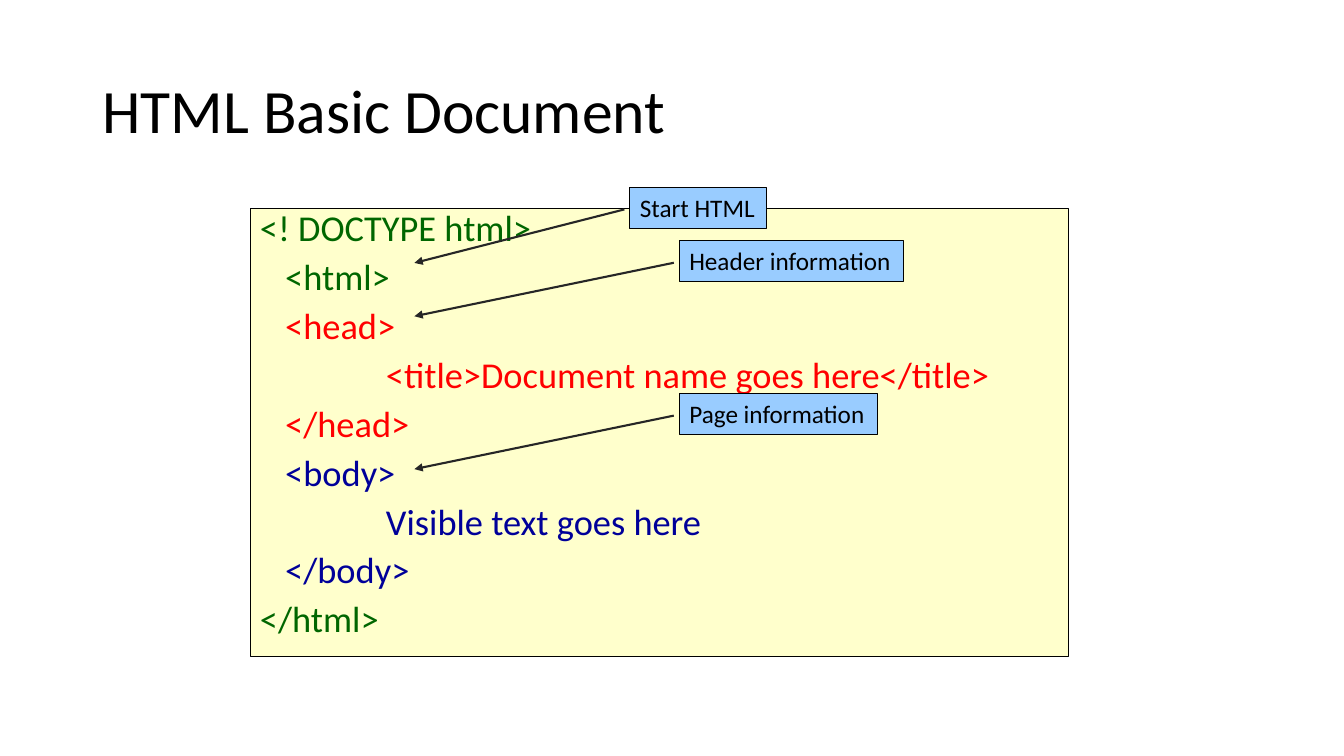
"""Builds the slide that explains the parts of a basic HTML document."""
from lxml.etree import SubElement
from pptx import Presentation
from pptx.dml.color import RGBColor
from pptx.enum.shapes import MSO_CONNECTOR, MSO_SHAPE
from pptx.enum.text import MSO_ANCHOR, MSO_AUTO_SIZE, PP_ALIGN
from pptx.oxml.ns import qn
from pptx.util import Pt

COLORS = {
    "black": "000000", "arrow": "262626", "panel": "FFFFCC", "label": "99CCFF",
    "root": "006600", "head": "FF0000", "body": "000099",
}


def add_text(paragraph, text, size, color):
    run = paragraph.add_run()
    run.text = text
    run.font.name = "Calibri"
    run.font.size = Pt(size)
    run.font.color.rgb = RGBColor.from_string(COLORS[color])


def add_box(left, top, width, height, fill):
    box = slide.shapes.add_shape(
        MSO_SHAPE.RECTANGLE, Pt(left), Pt(top), Pt(width), Pt(height))
    box.shadow.inherit = False
    box.fill.solid()
    box.fill.fore_color.rgb = RGBColor.from_string(COLORS[fill])
    box.line.color.rgb = RGBColor.from_string(COLORS["black"])
    box.line.width = Pt(0.75)
    box.text_frame.vertical_anchor = MSO_ANCHOR.TOP
    return box


deck = Presentation()
deck.slide_width, deck.slide_height = Pt(960), Pt(540)
slide = deck.slides.add_slide(deck.slide_layouts[5])

title = slide.shapes.title
title.left, title.top, title.width, title.height = Pt(66), Pt(28.8), Pt(828), Pt(104.4)
title.text_frame.vertical_anchor = MSO_ANCHOR.MIDDLE
heading = title.text_frame.paragraphs[0]
heading.alignment = PP_ALIGN.LEFT
heading.line_spacing = 0.9
add_text(heading, "HTML Basic Document", 44, "black")

code_lines = [
    ("<! DOCTYPE html>", 0, "root"),
    ("<html>", 18, "root"),
    ("<head>", 18, "head"),
    ("<title>Document name goes here</title>", 90, "head"),
    ("</head>", 18, "head"),
    ("<body>", 18, "body"),
    ("Visible text goes here", 90, "body"),
    ("</body>", 18, "body"),
    ("</html>", 0, "root"),
]
code = add_box(178.6, 149, 584.6, 319.7, "panel").text_frame
code.word_wrap = True
for number, (markup, indent, part) in enumerate(code_lines):
    line = code.add_paragraph() if number else code.paragraphs[0]
    line.alignment = PP_ALIGN.LEFT
    line.line_spacing = 0.8
    line.space_before = Pt(10)
    properties = line._p.get_or_add_pPr()
    properties.set("marL", str(Pt(indent)))
    properties.set("indent", "0")
    add_text(line, markup, 26, part)

callouts = [
    ("Start HTML", 450, 133.9, 97.5),
    ("Header information", 485.3, 172, 160),
    ("Page information", 485.3, 281.2, 141.3),
]
arrow_tip, arrow_drop = 296, 38.2
for caption, left, top, width in callouts:
    start = top + 15.7
    arrow = slide.shapes.add_connector(
        MSO_CONNECTOR.STRAIGHT, Pt(left - 4), Pt(start), Pt(arrow_tip), Pt(start + arrow_drop))
    arrow.line.color.rgb = RGBColor.from_string(COLORS["arrow"])
    arrow.line.width = Pt(1.5)
    SubElement(arrow.line._get_or_add_ln(), qn("a:tailEnd"), type="triangle")
    SubElement(arrow._element.spPr, qn("a:effectLst"))

    label = add_box(left, top, width, 29.1, "label").text_frame
    label.word_wrap = False
    label.auto_size = MSO_AUTO_SIZE.SHAPE_TO_FIT_TEXT
    label.paragraphs[0].alignment = PP_ALIGN.LEFT
    add_text(label.paragraphs[0], caption, 18, "black")

deck.save("out.pptx")
